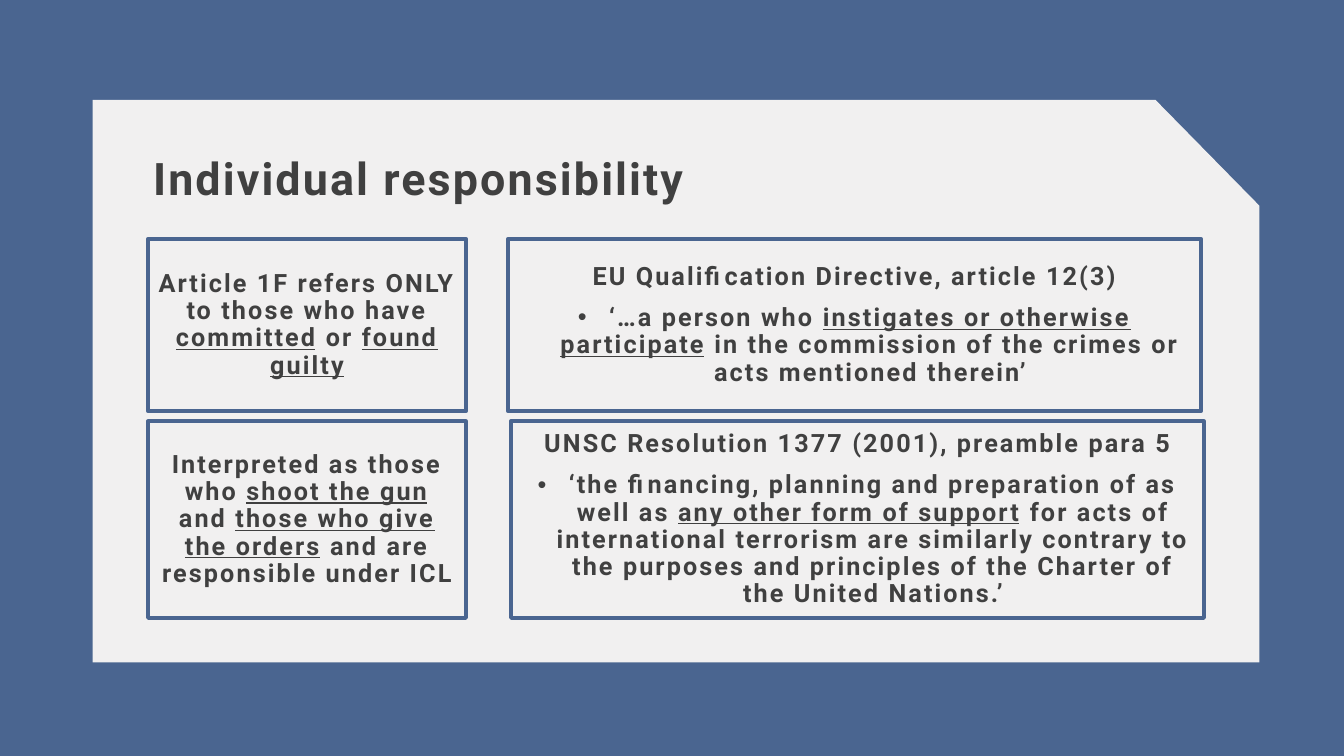
from dataclasses import dataclass
from lxml.etree import SubElement
from pptx import Presentation
from pptx.dml.color import RGBColor
from pptx.enum.shapes import MSO_SHAPE
from pptx.enum.text import MSO_ANCHOR, PP_ALIGN
from pptx.oxml.ns import qn
from pptx.util import Inches, Pt


@dataclass(frozen=True)
class Theme:
    blue: RGBColor = RGBColor(0x4A, 0x65, 0x90)
    paper: RGBColor = RGBColor(0xF1, 0xF0, 0xF0)
    ink: RGBColor = RGBColor(0x40, 0x40, 0x40)
    font: str = "Roboto"
    title_size: int = 32
    body_size: int = 18
    tracking: int = 150
    border: int = 3


class Deck:
    def __init__(self, theme):
        self.theme = theme
        self.prs = Presentation()
        self.prs.slide_width = Inches(13.33)
        self.prs.slide_height = Inches(7.5)
        self.s = self.prs.slides.add_slide(self.prs.slide_layouts[6])
        fill = self.s.background.fill
        fill.solid()
        fill.fore_color.rgb = theme.blue

    def panel(self, points):
        corners = [(Inches(x), Inches(y)) for x, y in points]
        builder = self.s.shapes.build_freeform(*corners[0])
        builder.add_line_segments(corners[1:], close=True)
        sp = builder.convert_to_shape()
        sp.shadow.inherit = False
        sp.fill.solid()
        sp.fill.fore_color.rgb = self.theme.paper
        sp.line.fill.background()

    def run(self, p, text, size, underline=False):
        r = p.add_run()
        r.text = text
        r.font.name = self.theme.font
        r.font.size = Pt(size)
        r.font.bold = True
        r.font.underline = underline
        r.font.color.rgb = self.theme.ink
        r.font._element.set("spc", str(self.theme.tracking))

    def title(self, text, x, y, w, h):
        sp = self.s.shapes.add_textbox(Inches(x), Inches(y), Inches(w), Inches(h))
        tf = sp.text_frame
        tf.word_wrap = True
        p = tf.paragraphs[0]
        p.line_spacing = 0.9
        self.run(p, text, self.theme.title_size)

    def bullet(self, p):
        pPr = p._p.get_or_add_pPr()
        pPr.set("marL", str(Inches(0.31)))
        pPr.set("indent", str(-Inches(0.31)))
        SubElement(pPr, qn("a:buFont")).set("typeface", "Arial")
        SubElement(pPr, qn("a:buChar")).set("char", "•")

    def box(self, paragraphs, x, y, w, h):
        sp = self.s.shapes.add_shape(
            MSO_SHAPE.RECTANGLE, Inches(x), Inches(y), Inches(w), Inches(h))
        sp.shadow.inherit = False
        sp.fill.background()
        sp.line.color.rgb = self.theme.blue
        sp.line.width = Pt(self.theme.border)
        tf = sp.text_frame
        tf.word_wrap = True
        tf.vertical_anchor = MSO_ANCHOR.MIDDLE
        for i, pieces in enumerate(paragraphs):
            p = tf.add_paragraph() if i else tf.paragraphs[0]
            p.alignment = PP_ALIGN.CENTER
            p.line_spacing = 0.9
            p.space_before = Pt(10)
            if i:
                self.bullet(p)
            for j, text in enumerate(pieces):
                self.run(p, text, self.theme.body_size, underline=j % 2 == 1)

    def save(self):
        self.prs.save("out.pptx")


def main():
    article = [["Article 1F refers ONLY to those who have ", "committed",
                " or ", "found guilty"]]
    resolution = [
        ["UNSC Resolution 1377 (2001), preamble para 5"],
        ["‘the financing, planning and preparation of as well as ",
         "any other form of support",
         " for acts of international terrorism are similarly contrary to the "
         "purposes and principles of the Charter of the United Nations.’"],
    ]
    directive = [
        ["EU Qualification Directive, article 12(3)"],
        ["‘…a person who ", "instigates or otherwise participate",
         " in the commission of the crimes or acts mentioned therein’"],
    ]
    interpretation = [["Interpreted as those who ", "shoot the gun", " and ",
                       "those who give the orders",
                       " and are responsible under ICL"]]

    left, narrow, wide = 1.47, 3.15, 6.87
    upper, lower = (2.37, 1.71), (4.18, 1.95)

    deck = Deck(Theme())
    deck.panel([(0.92, 0.99), (11.46, 0.99), (12.49, 2.04),
                (12.49, 6.57), (0.92, 6.57)])
    deck.title("Individual responsibility", 1.42, 1.51, 11.21, 1.04)
    for paragraphs, x, w, (y, h) in (
        (article, left, narrow, upper),
        (resolution, 5.07, wide, lower),
        (directive, 5.04, wide, upper),
        (interpretation, left, narrow, lower),
    ):
        deck.box(paragraphs, x, y, w, h)
    deck.save()


if __name__ == "__main__":
    main()
